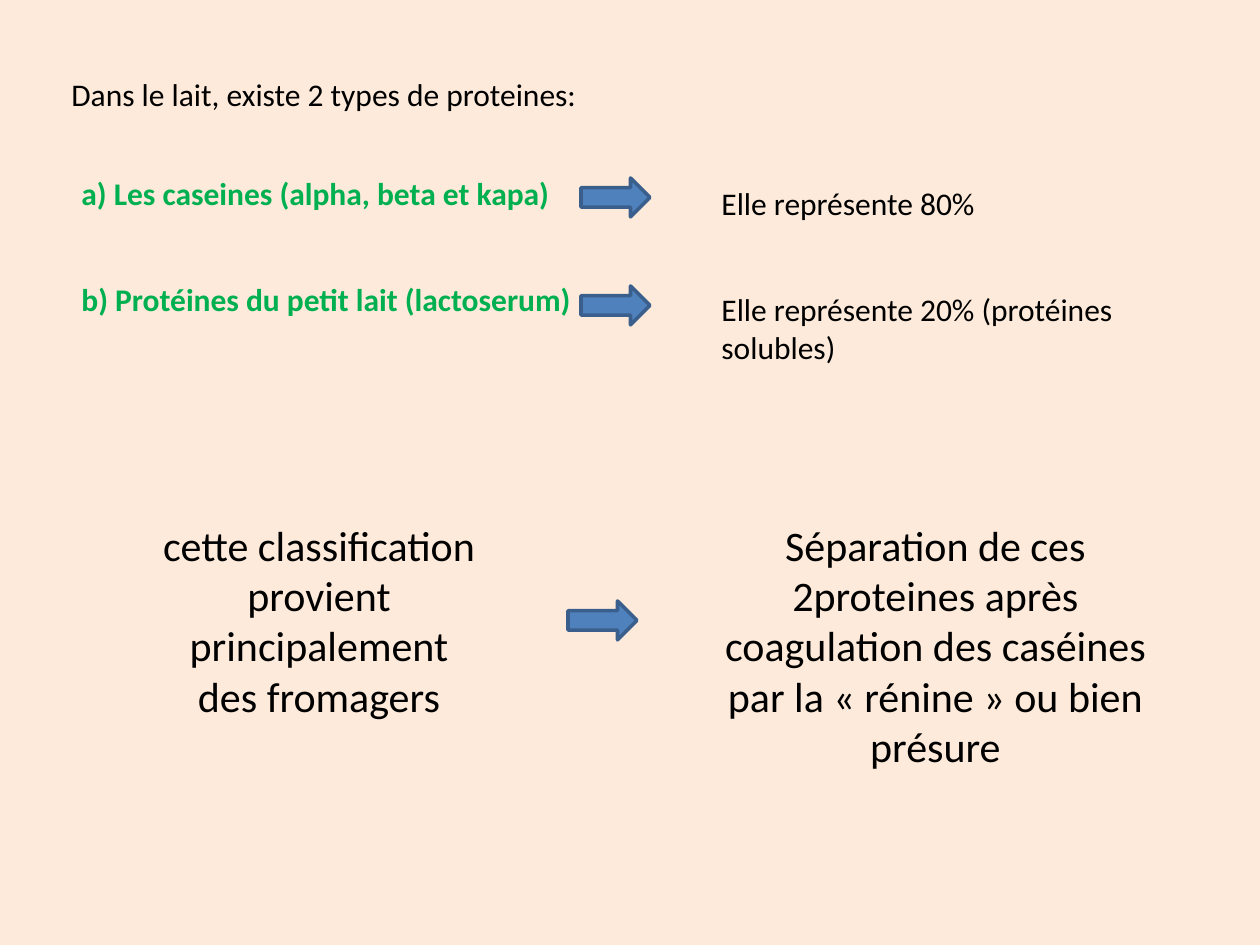
from dataclasses import dataclass

from pptx import Presentation
from pptx.dml.color import RGBColor
from pptx.enum.shapes import MSO_SHAPE
from pptx.enum.text import MSO_AUTO_SIZE, PP_ALIGN
from pptx.util import Emu, Pt

RIGHT_ARROW = MSO_SHAPE.RIGHT_ARROW
GROW = MSO_AUTO_SIZE.SHAPE_TO_FIT_TEXT
LEFT, CENTER = PP_ALIGN.LEFT, PP_ALIGN.CENTER

EMU_PER_PX = 914400 / 126
SLIDE_SIZE = (1260, 945)
ARROW_SIZE = (69, 39)
COLORS = {
    "background": "FDEADA",
    "text": "000000",
    "protein": "00B050",
    "arrow": "4F81BD",
    "outline": "3A5F8C",
}


@dataclass(frozen=True)
class Label:
    text: str
    left: int
    top: int
    width: int
    height: int = 50
    size: int = 18
    color: str = "text"
    bold: bool = False
    align: PP_ALIGN = LEFT


@dataclass(frozen=True)
class Arrow:
    left: int
    top: int


LABELS = [
    Label("Dans le lait, existe 2 types de proteines:", 59, 69, 581),
    Label("a) Les caseines (alpha, beta et kapa)", 69, 168, 501,
          color="protein", bold=True),
    Label("Elle représente 80%", 709, 178, 423),
    Label("b) Protéines du petit lait (lactoserum)", 69, 274, 601,
          color="protein", bold=True),
    Label("Elle représente 20% (protéines solubles)", 709, 284, 423, 89),
    Label("cette classification provient principalement des fromagers",
          147, 513, 344, 217, size=24, align=CENTER),
    Label("Séparation de ces 2proteines après coagulation des caséines "
          "par la « rénine » ou bien présure",
          689, 513, 493, 267, size=24, align=CENTER),
]
ARROWS = [Arrow(581, 178), Arrow(581, 286), Arrow(568, 601)]


def px(length: int) -> Emu:
    return Emu(round(length * EMU_PER_PX))


def rgb(name: str) -> RGBColor:
    return RGBColor.from_string(COLORS[name])


def apply_format(target, values: dict) -> None:
    for name, value in values.items():
        setattr(target, name, value)


def draw_label(page, label: Label) -> None:
    bounds = (label.left, label.top, label.width, label.height)
    box = page.shapes.add_textbox(*map(px, bounds))
    apply_format(box.text_frame, {"word_wrap": True, "auto_size": GROW})
    para = box.text_frame.paragraphs[0]
    para.alignment = label.align
    span = para.add_run()
    span.text = label.text
    apply_format(span.font, {
        "name": "Calibri",
        "size": Pt(label.size),
        "bold": label.bold,
    })
    span.font.color.rgb = rgb(label.color)


def draw_arrow(page, arrow: Arrow) -> None:
    bounds = (arrow.left, arrow.top, *ARROW_SIZE)
    shape = page.shapes.add_shape(RIGHT_ARROW, *map(px, bounds))
    shape.shadow.inherit = False
    shape.fill.solid()
    shape.fill.fore_color.rgb = rgb("arrow")
    shape.line.color.rgb = rgb("outline")
    shape.line.width = Pt(2)


def main() -> None:
    deck = Presentation()
    deck.slide_width, deck.slide_height = map(px, SLIDE_SIZE)
    page = deck.slides.add_slide(deck.slide_layouts[6])
    page.background.fill.solid()
    page.background.fill.fore_color.rgb = rgb("background")
    for label in LABELS:
        draw_label(page, label)
    for arrow in ARROWS:
        draw_arrow(page, arrow)
    deck.save("out.pptx")


if __name__ == "__main__":
    main()
